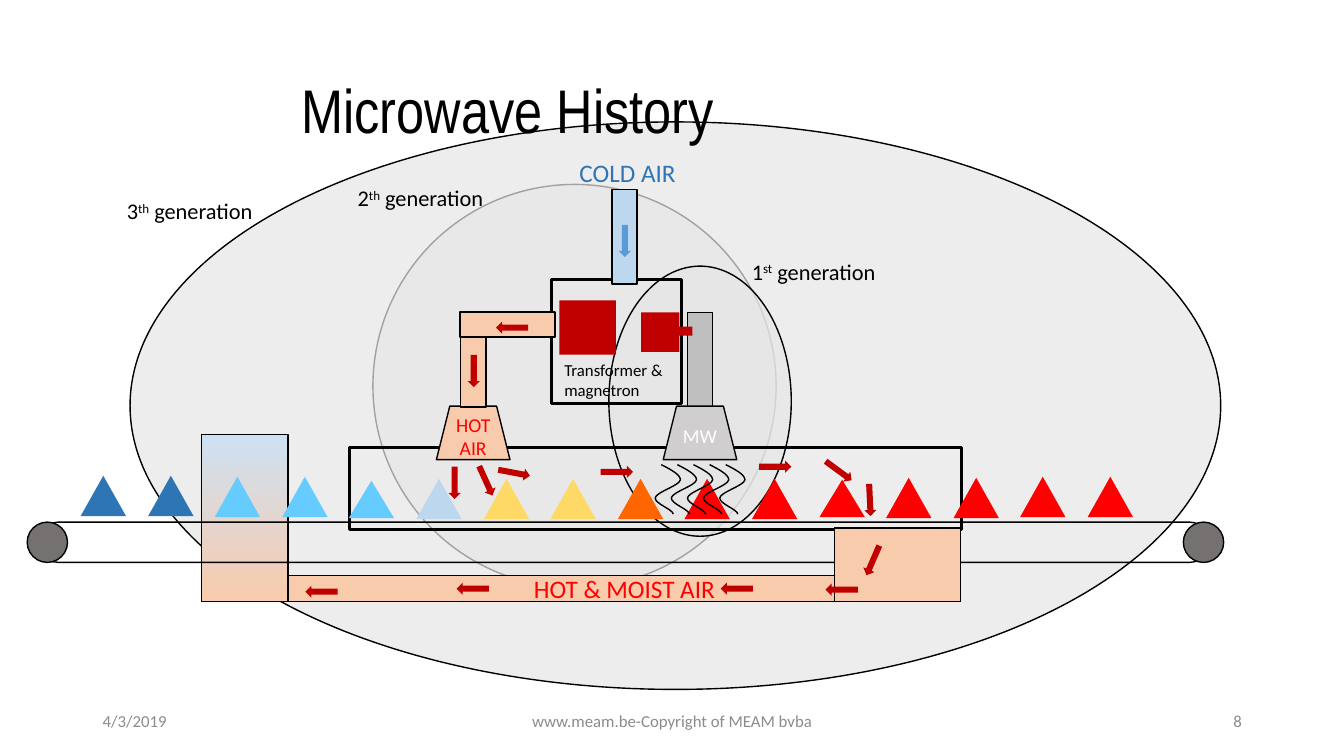
from lxml import etree
from pptx import Presentation
from pptx import util as u
from pptx.dml import color
from pptx.enum import shapes, text
from pptx.oxml import ns

PX = 9144  # 100 px to the inch
S = shapes.MSO_SHAPE
A = text.PP_ALIGN
MID = text.MSO_ANCHOR.MIDDLE
RED, PEACH, BLACK = "C00000", "F8CBAD", "000000"


def rgb(code):
    return color.RGBColor.from_string(code)


def style(obj, **fmt):
    for key, val in fmt.items():
        setattr(obj, key, val)


def edge(shape, line, width=1):
    if line:
        shape.line.color.rgb = rgb(line)
        shape.line.width = u.Pt(width)
    else:
        shape.line.fill.background()


def part(tree, box, kind, at, fill=None, line=None, width=1, turn=0):
    """Add a preset shape at a place relative to the corner of box."""
    x, y, w, h = at
    shape = tree.add_shape(kind, (box[0] + x) * PX, (box[1] + y) * PX, w * PX, h * PX)
    style(shape, rotation=turn)
    shape.shadow.inherit = False
    if fill:
        shape.fill.solid()
        shape.fill.fore_color.rgb = rgb(fill)
    else:
        shape.fill.background()
    edge(shape, line, width)
    return shape


def write(frame, words, size, ink, align=A.LEFT, face="Calibri"):
    """Fill a frame with runs; each odd run is raised."""
    para = frame.paragraphs[0]
    para.alignment = align
    for i, word in enumerate(words):
        run = para.add_run()
        run.text = word
        style(run.font, size=u.Pt(size), name=face)
        run.font.color.rgb = rgb(ink)
        if i % 2:
            run.font._element.set("baseline", "30000")


def label(tree, box, words, size, ink, align=A.LEFT, **fmt):
    note = tree.add_textbox(*(n * PX for n in box))
    style(note.text_frame, **{"word_wrap": True, **fmt})
    write(note.text_frame, words, size, ink, align)


def inner(shape, word, size, ink):
    style(shape.text_frame, word_wrap=True, vertical_anchor=MID, margin_left=0,
          margin_right=0, margin_top=0, margin_bottom=0)
    write(shape.text_frame, [word], size, ink, A.CENTER)


def zones(tree, box):
    for at in ((241, 62, 400, 400), (0, 0, 1082, 563), (475, 143, 181, 268)):
        oval = part(tree, box, S.OVAL, at, "E7E6E6", BLACK)
        tint = oval._element.spPr.find(".//" + ns.qn("a:srgbClr"))
        etree.SubElement(tint, ns.qn("a:alpha")).set("val", "70000")


def vent(tree, box):
    shape = part(tree, box, S.RECTANGLE, (0, 0, *box[2:]), PEACH, BLACK)
    shape.fill.gradient()
    shape.fill.gradient_angle = 270
    for stop, code in zip(shape.fill.gradient_stops, ("CEE1F2", PEACH)):
        stop.color.rgb = rgb(code)


def source(tree, box):
    """Magnetron housing with its air and wave ducts."""
    part(tree, box, S.RECTANGLE, (0, 0, *box[2:]), None, BLACK, 2)
    for x, y, fill in ((60, -89, "BDD7EE"), (135, 33, "BFBFBF")):
        part(tree, box, S.RECTANGLE, (x, y, 25, 94), fill, BLACK)


def head(slide, box):
    title = slide.shapes.title
    x, y, w, h = (n * PX for n in box)
    style(title, left=x, top=y, width=w, height=h)
    style(title.text_frame, vertical_anchor=MID, word_wrap=True)
    write(title.text_frame, ["Microwave History"], 44, BLACK, face="Arial Narrow")
    title.text_frame.paragraphs[0].line_spacing = 0.9
    slide.shapes._spTree.append(title._element)


def foot(tree, box):
    x, y, _, h = box
    for dx, w, word, align in ((0, 300, "4/3/2019", A.LEFT),
                               (350, 450, "www.meam.be-Copyright of MEAM bvba", A.CENTER),
                               (850, 300, "8", A.RIGHT)):
        label(tree, (x + dx, y, w, h), [word], 12, "8C8C8C", align, vertical_anchor=MID)


def oven(tree, box):
    part(tree, box, S.RECTANGLE, (0, 0, *box[2:]), None, BLACK, 2)
    for x, fill, word, ink in ((311, "D0CECE", "MW", "FFFFFF"),
                               (86, PEACH, "HOT AIR", "FF0000")):
        hood = part(tree, box, S.TRAPEZOID, (x, -41, 73, 53), fill, BLACK)
        inner(hood, word, 14, ink)


def power(tree, box):
    for at in ((81, 12, 38, 39), (0, 0, 56, 54), (94, 26, 38, 9)):
        part(tree, box, S.RECTANGLE, at, RED)


def belt(tree, box):
    group = tree.add_group_shape().shapes
    w, d = box[2:]
    band = part(group, box, S.ROUNDED_RECTANGLE, (11, 0, w - 25, d), None, BLACK)
    band.adjustments[0] = 0.5
    for x in (0, w - d):
        part(group, box, S.OVAL, (x, 0, d, d), "767171", BLACK)


def goods(tree, box):
    """Heated pieces at an equal step along the belt."""
    runs = (("2E75B6", 0, 40, 2), ("66CCFF", 1, 40, 2), ("66CCFF", 5, 37, 1),
            ("BDD7EE", 3, 40, 1), ("FFD966", 3, 40, 2), ("FF6600", 3, 40, 1),
            ("FF0000", 3, 40, 2), ("FF0000", 4, 37, 1), ("FF0000", 2, 40, 2),
            ("FF0000", 1, 40, 2))
    items = [run[:3] for run in runs for _ in range(run[3])]
    step = (box[2] - 45) / (len(items) - 1)
    for i, (fill, y, h) in enumerate(items):
        part(tree, box, S.ISOSCELES_TRIANGLE, (round(i * step), y, 45, h), fill)


def elbow(tree, box):
    part(tree, box, S.RECTANGLE, (0, 0, 25, 94), PEACH, BLACK)
    part(tree, box, S.RECTANGLE, (34, -35, 25, 94), PEACH, BLACK, turn=90)


def curve(shape):
    """Turn each three line segments of an outline into one cubic curve."""
    track = shape._element.spPr.find(".//" + ns.qn("a:path"))
    lines = track.findall(ns.qn("a:lnTo"))
    for i in range(0, len(lines), 3):
        cubic = etree.SubElement(track, ns.qn("a:cubicBezTo"))
        for line in lines[i:i + 3]:
            cubic.append(line[0])
            track.remove(line)


def waves(tree, box):
    knots = ((6, 0), (16, 5), (25, 10), (25, 15), (24, 21), (1, 27), (0, 33),
             (0, 39), (17, 44), (18, 49))
    for k in range(5):
        pts = [(box[0] + 16 * k + x, box[1] + y) for x, y in knots]
        pen = tree.build_freeform(*pts[0], scale=PX)
        pen.add_line_segments(pts[1:], close=False)
        wave = pen.convert_to_shape()
        curve(wave)
        wave.shadow.inherit = False
        wave.fill.background()
        edge(wave, BLACK)


def drain(tree, box):
    """Return duct and the sump at its right end."""
    duct = part(tree, box, S.RECTANGLE, (0, 0, *box[2:]), PEACH, BLACK)
    inner(duct, "HOT & MOIST AIR", 18, "FF0000")
    part(tree, box, S.RECTANGLE, (542, -47, 125, 73), PEACH, BLACK)


def flow(tree, box):
    part(tree, box, S.DOWN_ARROW, (301, 0, 12, 32), "5B9BD5")
    for x, y, turn in ((151, 129, 0), (189, 86, 90), (132, 240, 0), (163, 238, 335.6),
                       (150, 345, 90), (412, 345, 90), (0, 348, 90), (191, 230, 280.7),
                       (293, 229, 270), (450, 224, 270), (513, 228, 306.2),
                       (544, 257, 357.3), (516, 346, 90), (547, 317, 23.5)):
        part(tree, box, S.DOWN_ARROW, (x, y, 12, 32), RED, turn=turn)


def names(tree, box):
    x, y = box[:2]
    label(tree, (x + 449, y, 117, 40), ["COLD AIR"], 18, "2E75B6", word_wrap=False)
    label(tree, (x + 434, y + 201, 168, 50), ["Transformer & magnetron"], 12, BLACK)
    for dx, dy, num, end in ((620, 100, "1", "st"), (229, 27, "2", "th"), (0, 40, "3", "th")):
        label(tree, (x + dx, y + dy, 168, 37), [num, end, " generation"], 16, BLACK)


def main():
    deck = Presentation()
    style(deck, slide_width=4000 * PX // 3, slide_height=750 * PX)
    slide = deck.slides.add_slide(deck.slide_layouts[5])
    tree = slide.shapes
    zones(tree, (129, 121, 1082, 563))
    vent(tree, (200, 431, 86, 166))
    source(tree, (547, 277, 129, 123))
    head(slide, (289, 40, 953, 145))
    foot(tree, (92, 695, 1150, 40))
    oven(tree, (347, 444, 607, 81))
    power(tree, (555, 298, 132, 54))
    elbow(tree, (457, 310, 94, 94))
    belt(tree, (27, 518, 1187, 40))
    goods(tree, (80, 472, 1044, 43))
    waves(tree, (650, 461, 89, 49))
    drain(tree, (286, 571, 667, 26))
    names(tree, (116, 151, 788, 251))
    flow(tree, (313, 223, 559, 380))
    deck.save("out.pptx")


if __name__ == "__main__":
    main()
